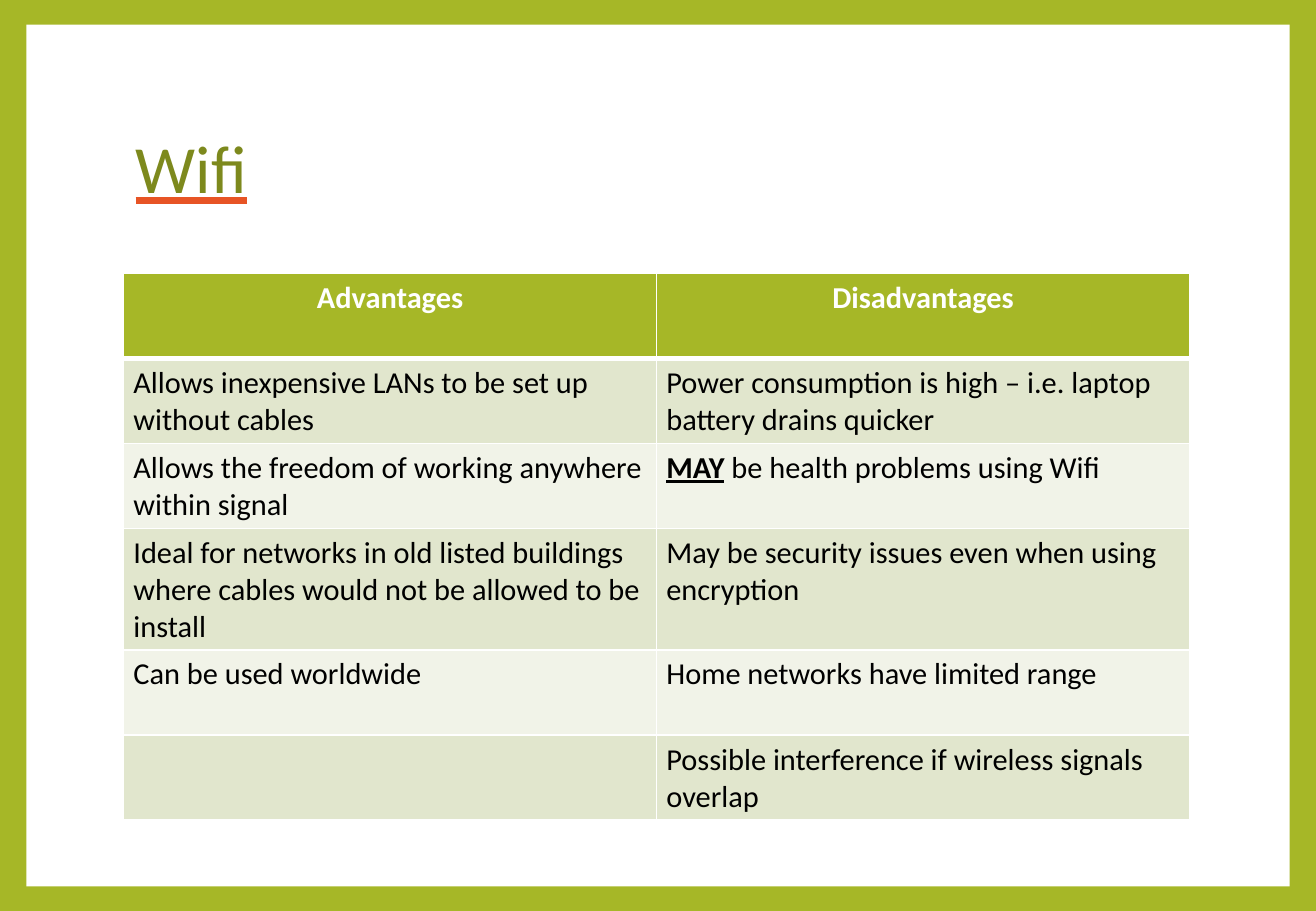
from lxml import etree
from pptx import Presentation, util as u
from pptx.dml.color import RGBColor
from pptx.enum import shapes, text
from pptx.oxml import ns

WIDE, HIGH = 10.83, 7.5
HUES = {"lime": "A6B727", "olive": "7D891D", "red": "E75425", "white": "FFFFFF",
        "black": "000000", "sage": "E1E6CD", "pale": "F1F3E8"}
BASE = {"name": "Calibri", "size": u.Pt(18), "bold": False}
HEAD = {**BASE, "bold": True}
LOUD = {**HEAD, "underline": True}
TITLE = {**BASE, "size": u.Pt(40), "underline": True}
ROWS = [
    ("Advantages", "Disadvantages"),
    ("Allows inexpensive LANs to be set up without cables",
     "Power consumption is high – i.e. laptop battery drains quicker"),
    ("Allows the freedom of working anywhere within signal",
     "*MAY* be health problems using Wifi"),
    ("Ideal for networks in old listed buildings where cables would not be allowed to be install",
     "May be security issues even when using encryption"),
    ("Can be used worldwide", "Home networks have limited range"),
    ("", "Possible interference if wireless signals overlap"),
]


def hue(key):
    return RGBColor.from_string(HUES[key])


def place(x, y, w, h):
    return [u.Inches(v) for v in (x * WIDE, y * HIGH, w * WIDE, h * HIGH)]


def paint(fill, key):
    fill.solid()
    fill.fore_color.rgb = hue(key)


def style(font, form, key):
    for name, value in form.items():
        setattr(font, name, value)
    font.color.rgb = hue(key)


def solid(parent, key):
    fill = etree.SubElement(parent, ns.qn("a:solidFill"))
    etree.SubElement(fill, ns.qn("a:srgbClr"), val=HUES[key])


def frame(slide, box):
    paint(slide.background.fill, "lime")
    panel = slide.shapes.add_shape(shapes.MSO_SHAPE.RECTANGLE, *place(*box))
    panel.shadow.inherit = False
    paint(panel.fill, "white")
    panel.line.fill.background()


def title(slide, box, words):
    area = slide.shapes.add_textbox(*place(*box)).text_frame
    area.word_wrap = True
    area.vertical_anchor = text.MSO_ANCHOR.MIDDLE
    para = area.paragraphs[0]
    para.line_spacing = 0.9
    run = para.add_run()
    run.text = words
    run.font.color.rgb = hue("olive")
    solid(etree.SubElement(run.font._element, ns.qn("a:uFill")), "red")
    style(run.font, TITLE, "olive")


def edges(cell, top, base):
    props = cell._tc.get_or_add_tcPr()
    for side, width in (("L", 1), ("R", 1), ("T", top), ("B", base)):
        line = etree.SubElement(props, ns.qn("a:ln" + side), w=str(u.Pt(width)))
        solid(line, "white")


def table(slide, box, rows):
    grid = slide.shapes.add_table(len(rows), len(rows[0]), *place(*box)).table
    for r, row in enumerate(rows):
        for c, words in enumerate(row):
            cell = grid.cell(r, c)
            edges(cell, 3 if r == 1 else 1, 1 if r else 3)
            paint(cell.fill, ("sage" if r % 2 else "pale") if r else "lime")
            cell.margin_left = cell.margin_right = u.Inches(0.08)
            para = cell.text_frame.paragraphs[0]
            style(para.font, BASE, "black")
            if r == 0:
                para.alignment = text.PP_ALIGN.CENTER
            for n, part in enumerate(words.split("*")):
                if part:
                    run = para.add_run()
                    run.text = part
                    form = LOUD if n % 2 else BASE if r else HEAD
                    style(run.font, form, "black" if r else "white")


def main():
    deck = Presentation()
    deck.slide_width, deck.slide_height = u.Inches(WIDE), u.Inches(HIGH)
    slide = deck.slides.add_slide(deck.slide_layouts[6])
    frame(slide, (0.02, 0.027, 0.96, 0.946))
    title(slide, (0.094, 0.09, 0.81, 0.197), "Wifi")
    table(slide, (0.094, 0.3, 0.81, 0.56), ROWS)
    deck.save("out.pptx")


if __name__ == "__main__":
    main()
